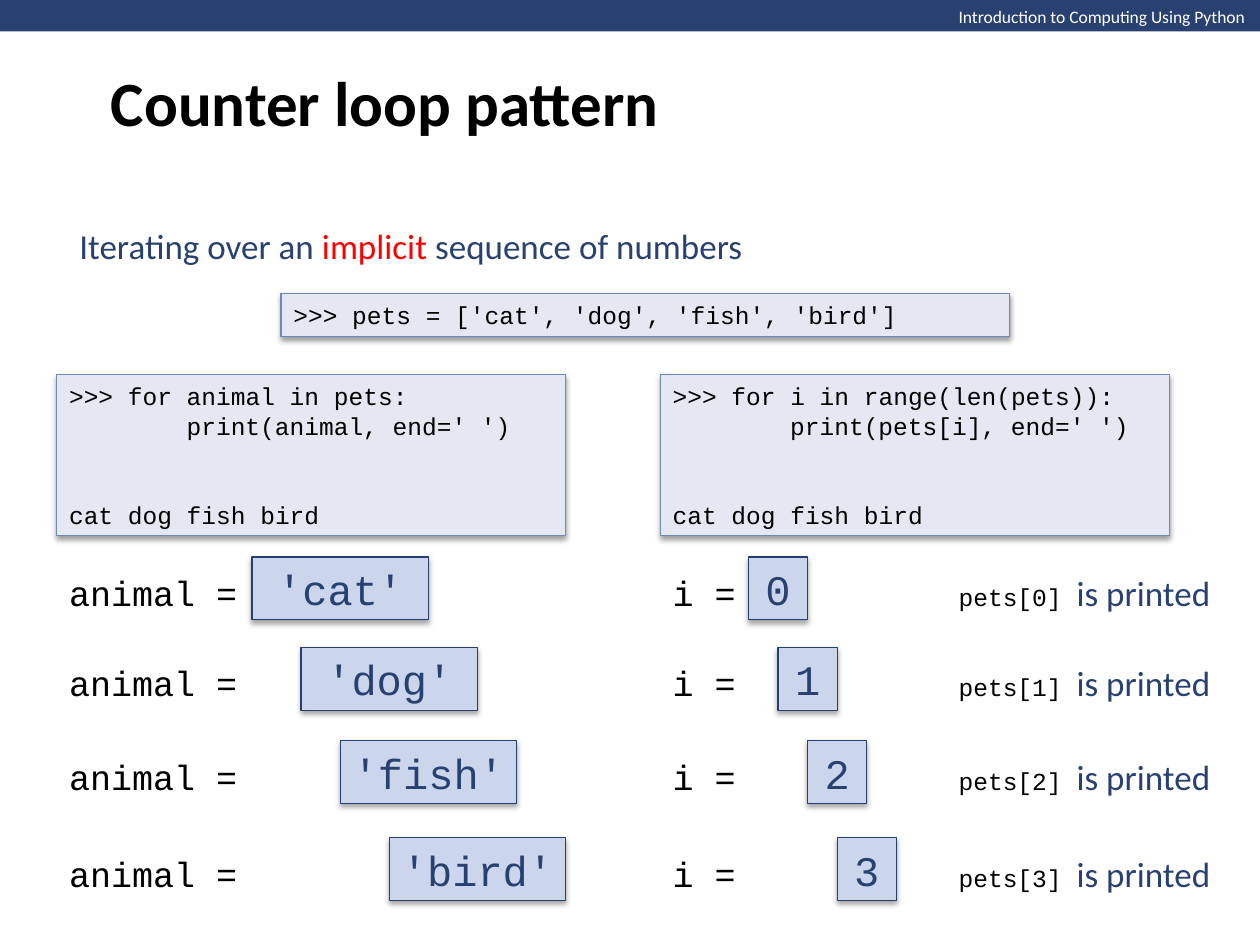
"""Builds a slide that contrasts looping over items with looping over a counter."""
from lxml import etree
from pptx import Presentation, util as u
from pptx.dml import color
from pptx.enum import shapes, text
from pptx.oxml import ns

MONO, SANS = "Courier New", "Calibri"
NAVY, BLACK, WHITE, RED = "294171", "000000", "FFFFFF", "FF0000"
LEFT, CENTER = text.PP_ALIGN.LEFT, text.PP_ALIGN.CENTER
rgb = color.RGBColor.from_string


def write(frame, lines, size, ink=BLACK, face=MONO, align=LEFT, wrap=True):
    """Fill a text frame; each line is a list of runs."""
    frame.word_wrap = wrap
    frame.auto_size = text.MSO_AUTO_SIZE.NONE
    frame.vertical_anchor = text.MSO_ANCHOR.MIDDLE
    for number, runs in enumerate(lines):
        line = frame.add_paragraph() if number else frame.paragraphs[0]
        line.alignment = align
        line.space_before = u.Pt(0)
        line.font.size, line.font.name = u.Pt(size), face
        line.font.color.rgb = rgb(ink)
        for words in runs:
            line.add_run().text = words
    return frame.paragraphs


def panel(left, top, width, height, fill, edge, opacity):
    """Add a filled, outlined rectangle with a soft shadow below it."""
    box = slide.shapes.add_shape(shapes.MSO_SHAPE.RECTANGLE, *map(u.Inches, (left, top, width, height)))
    box.fill.solid()
    box.fill.fore_color.rgb = rgb(fill)
    box.line.color.rgb = rgb(edge)
    box.line.width = u.Pt(0.75)
    box.shadow.inherit = False
    effects = box.element.spPr.find(ns.qn("a:effectLst"))
    shadow = etree.SubElement(effects, ns.qn("a:outerShdw"), blurRad=str(u.Pt(3.1)),
                              dist=str(u.Pt(1.8)), dir="5400000", rotWithShape="0")
    black = etree.SubElement(shadow, ns.qn("a:srgbClr"), val=BLACK)
    etree.SubElement(black, ns.qn("a:alpha"), val=str(opacity * 1000))
    return box.text_frame


deck = Presentation()
deck.slide_width, deck.slide_height = u.Inches(10), u.Inches(7.5)
slide = deck.slides.add_slide(deck.slide_layouts[1])
title, subtitle = slide.placeholders

banner = slide.shapes.add_shape(shapes.MSO_SHAPE.RECTANGLE, 0, 0, deck.slide_width, u.Inches(0.25))
banner.fill.solid()
banner.fill.fore_color.rgb = rgb(NAVY)
banner.line.fill.background()
banner.shadow.inherit = False
course = slide.shapes.add_textbox(u.Inches(7.51), 0, u.Inches(2.5), u.Inches(0.27))
write(course.text_frame, [["Introduction to Computing Using Python"]], 10, WHITE, SANS, wrap=False)

title.left, title.top, title.width, title.height = map(u.Inches, (0.78, 0, 8.5, 1.61))
write(title.text_frame, [["Counter loop pattern"]], 36, BLACK, SANS)[0].font.bold = True

subtitle.left, subtitle.top, subtitle.width, subtitle.height = map(u.Inches, (0.53, 1.73, 8.93, 0.44))
topic = write(subtitle.text_frame, [["Iterating over an ", "implicit ", "sequence of numbers"]], 20, NAVY, SANS)[0]
topic.runs[1].font.color.rgb = rgb(RED)
topic_format = topic._p.get_or_add_pPr()
topic_format.set("marL", "0")
topic_format.set("indent", "0")
etree.SubElement(topic_format, ns.qn("a:buNone"))
topic_format.insert_element_before(topic_format.find(ns.qn("a:buNone")), "a:tabLst", "a:defRPr")

item_column, counter_column, printed_column = 0.45, 5.24, 7.51
listings = [
    (2.23, 2.33, 5.78, 0.34, [">>> pets = ['cat', 'dog', 'fish', 'bird']"]),
    (item_column, 2.97, 4.04, 1.28,
     [">>> for animal in pets:", "print(animal, end=' ')", "cat dog fish bird"]),
    (counter_column, 2.97, 4.04, 1.28,
     [">>> for i in range(len(pets)):", "print(pets[i], end=' ')", "cat dog fish bird"]),
]
code_line = 17
for left, top, width, height, code in listings:
    frame = panel(left, top, width, height, "E3E8F2", "7088BA", 38)
    lines = write(frame, [[line] for line in code], 14)
    for line in lines:
        line.line_spacing = u.Pt(code_line)
    if len(lines) > 1:
        lines[1]._p.get_or_add_pPr().set("marL", str(u.Pt(8 * 8.4)))
        lines[2].space_before = u.Pt(2 * code_line)

steps = [("'cat'", 2, 4.42), ("'dog'", 2.39, 5.14), ("'fish'", 2.7, 5.88), ("'bird'", 3.09, 6.65)]
for index, (pet, pet_left, top) in enumerate(steps):
    values = [(pet, pet_left, 1.4), (str(index), 5.94 + index * 0.235, 0.47)]
    for value, left, width in values:
        write(panel(left, top, width, 0.5, "CBD6EC", "263F70", 35), [[value]], 24, NAVY, align=CENTER)

    labels = [
        (item_column, 1.55, ["animal ="]),
        (counter_column, 0.71, ["i ="]),
        (printed_column, 2.22, [f"pets[{index}] ", "is printed"]),
    ]
    for left, width, runs in labels:
        label = slide.shapes.add_textbox(*map(u.Inches, (left, top + 0.06, width, 0.44)))
        line = write(label.text_frame, [runs], 20, wrap=False)[0]
    expression, remark = line.runs
    expression.font.size = u.Pt(14)
    remark.font.name = SANS
    remark.font.color.rgb = rgb(NAVY)

deck.save("out.pptx")
